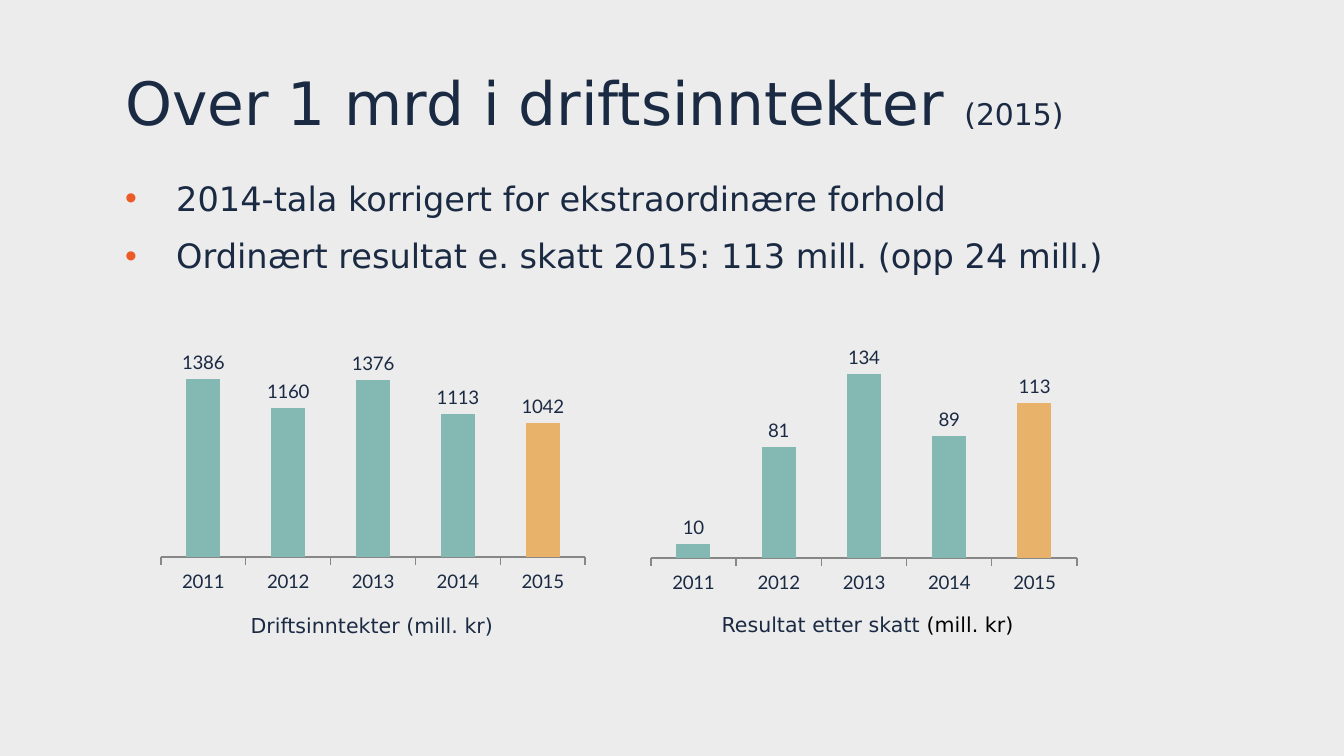
from lxml import etree
from pptx import Presentation
from pptx.chart.data import CategoryChartData
from pptx.dml.color import RGBColor
from pptx.enum.chart import XL_CHART_TYPE, XL_LABEL_POSITION, XL_TICK_MARK
from pptx.enum.text import MSO_ANCHOR, PP_ALIGN
from pptx.oxml.ns import qn
from pptx.util import Emu, Pt

COLUMNS = XL_CHART_TYPE.COLUMN_CLUSTERED
OUTSIDE_END = XL_LABEL_POSITION.OUTSIDE_END
TICK_OUTSIDE, TICK_NONE = XL_TICK_MARK.OUTSIDE, XL_TICK_MARK.NONE
TOP, MIDDLE = MSO_ANCHOR.TOP, MSO_ANCHOR.MIDDLE
LEFT, CENTER = PP_ALIGN.LEFT, PP_ALIGN.CENTER

EMU_PER_PX = 914400 / 134.4
BACKGROUND, NAVY, BLACK = "ECECEC", "1B2A43", "000000"
TEAL, AMBER, ORANGE, GRAY = "84B8B2", "E9B26B", "EA5B28", "878787"
YEARS = ["2011", "2012", "2013", "2014", "2015"]


def px(length):
    """Turn pixels into EMU."""
    return Emu(round(length * EMU_PER_PX))


def color(hex_code):
    """Turn a hex string into a colour."""
    return RGBColor.from_string(hex_code)


class SlideBuilder:
    """Hold the style and the current slide."""

    text_font = "DejaVu Sans"
    chart_font = "Lato"

    def __init__(self, presentation):
        """Add a blank slide with the background colour."""
        self.slide = presentation.slides.add_slide(presentation.slide_layouts[6])
        fill = self.slide.background.fill
        fill.solid()
        fill.fore_color.rgb = color(BACKGROUND)

    def set_font(self, font, name, size, hex_code=NAVY):
        """Set the name, size and colour of a font."""
        font.name = name
        font.size = Pt(size)
        font.color.rgb = color(hex_code)

    def text_frame(self, box, anchor=TOP):
        """Add a wrapping text box and return its frame."""
        frame = self.slide.shapes.add_textbox(*map(px, box)).text_frame
        frame.word_wrap = True
        frame.vertical_anchor = anchor
        return frame

    def line(self, box, runs, size, align=LEFT, anchor=TOP):
        """Add one paragraph of runs given as text, size and colour."""
        paragraph = self.text_frame(box, anchor).paragraphs[0]
        paragraph.alignment = align
        self.set_font(paragraph.font, self.text_font, size)
        for text, run_size, hex_code in runs:
            run = paragraph.add_run()
            run.text = text
            self.set_font(run.font, self.text_font, run_size, hex_code)

    def bullets(self, box, texts, size, indent):
        """Add a bulleted list."""
        frame = self.text_frame(box)
        for index, text in enumerate(texts):
            paragraph = frame.add_paragraph() if index else frame.paragraphs[0]
            paragraph.text = text
            paragraph.line_spacing = 1.2
            paragraph.space_before = Pt(4 if index else 0)
            paragraph.space_after = Pt(1)
            properties = paragraph._p.get_or_add_pPr()
            properties.set("marL", str(px(indent)))
            properties.set("indent", str(-px(indent)))
            bullet_color = etree.SubElement(properties, qn("a:buClr"))
            etree.SubElement(bullet_color, qn("a:srgbClr"), val=ORANGE)
            etree.SubElement(properties, qn("a:buFont"), typeface="Arial")
            etree.SubElement(properties, qn("a:buChar"), char="•")
            self.set_font(paragraph.font, self.text_font, size)

    def column_chart(self, box, values, maximum, major_unit):
        """Add a column chart with the last year highlighted."""
        data = CategoryChartData()
        data.categories = YEARS
        data.add_series("Series 1", values)
        chart = self.slide.shapes.add_chart(COLUMNS, *map(px, box), data).chart
        chart.has_legend = False
        chart.has_title = False
        self.set_font(chart.font, self.chart_font, 10)

        value_axis = chart.value_axis
        value_axis.visible = False
        value_axis.has_major_gridlines = False
        value_axis.minimum_scale = 0
        value_axis.maximum_scale = maximum
        value_axis.major_unit = major_unit
        category_axis = chart.category_axis
        category_axis.major_tick_mark = TICK_OUTSIDE
        category_axis.minor_tick_mark = TICK_NONE
        category_axis.format.line.color.rgb = color(GRAY)
        category_axis.format.line.width = Pt(0.75)

        plot = chart.plots[0]
        plot.gap_width = 150
        plot.vary_by_categories = False
        plot.has_data_labels = True
        labels = plot.data_labels
        labels.show_value = True
        labels.position = OUTSIDE_END
        self.set_font(labels.font, self.chart_font, 10)
        series = plot.series[0]
        last_point = series.points[len(values) - 1]
        for item, hex_code in ((series, TEAL), (last_point, AMBER)):
            item.format.fill.solid()
            item.format.fill.fore_color.rgb = color(hex_code)


def main():
    """Build the slide and save it."""
    presentation = Presentation()
    presentation.slide_width = px(1344)
    presentation.slide_height = px(756)
    builder = SlideBuilder(presentation)
    title = [("Over 1 mrd i driftsinntekter ", 32, NAVY), ("(2015)", 16, NAVY)]
    builder.line((112, 46, 1059, 112), title, 32, anchor=MIDDLE)
    builder.bullets((112, 163, 1059, 532), [
        "2014-tala korrigert for ekstraordinære forhold",
        "Ordinært resultat e. skatt 2015: 113 mill. (opp 24 mill.)",
    ], 18, 51)
    revenue = [("Driftsinntekter (mill. kr)", 11, NAVY)]
    result = [("Resultat etter skatt ", 11, NAVY), ("(mill. kr)", 11, BLACK)]
    builder.line((180, 606, 384, 39), revenue, 11, CENTER)
    builder.line((650, 605, 435, 39), result, 11, CENTER)
    builder.column_chart((152, 333, 442, 265), (1386, 1160, 1376, 1113, 1042), 1700, 200)
    builder.column_chart((642, 333, 444, 266), (10, 81, 134, 89, 113), 160, 20)
    presentation.save("out.pptx")


if __name__ == "__main__":
    main()
